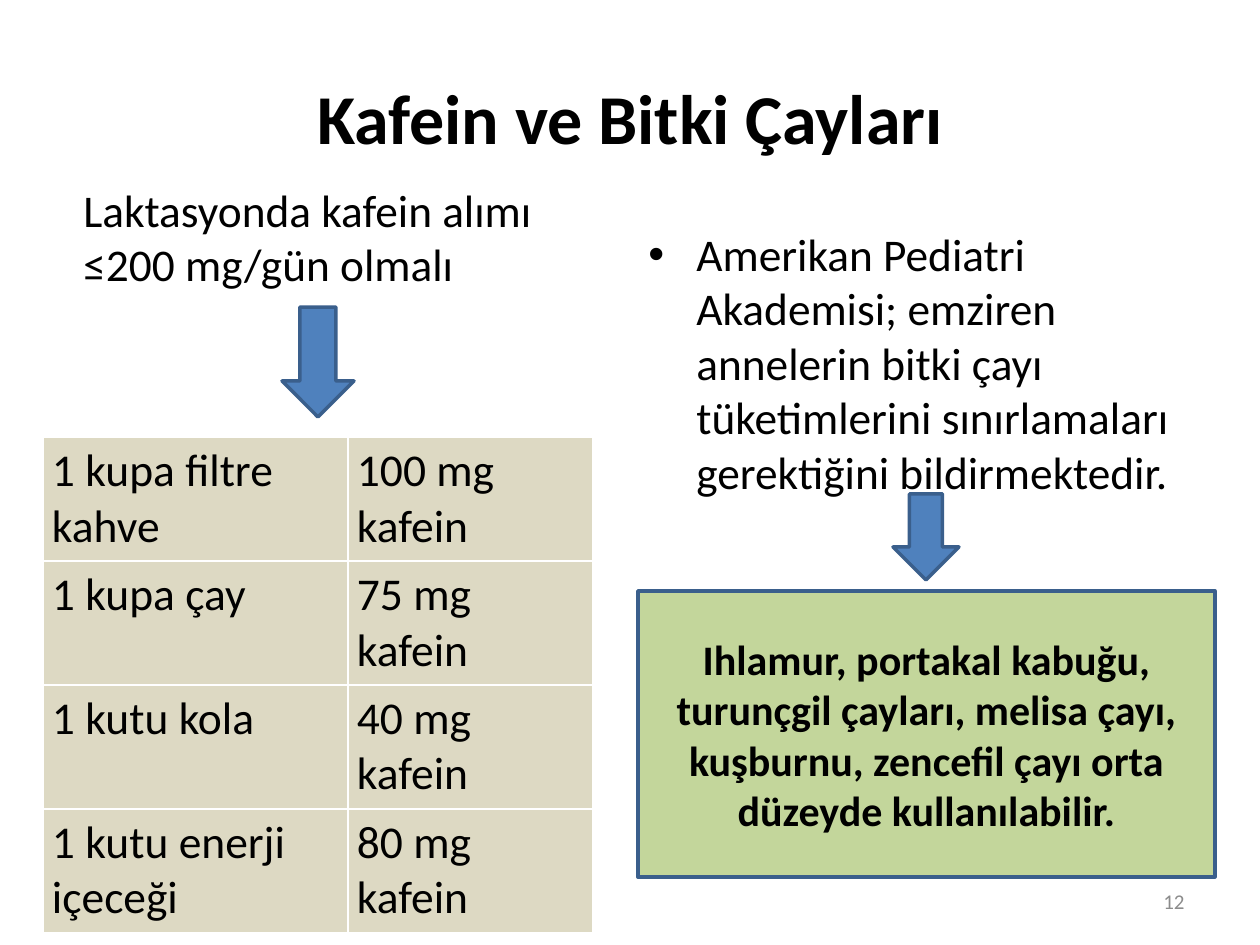
import pptx
import pptx.util
import pptx.dml.color
import pptx.enum.shapes
import pptx.enum.text
import pptx.oxml
import pptx.oxml.ns

RGBColor = pptx.dml.color.RGBColor
SHAPES = pptx.enum.shapes.MSO_SHAPE
ALIGN = pptx.enum.text.PP_ALIGN
ANCHOR = pptx.enum.text.MSO_ANCHOR

BLACK = RGBColor(0x00, 0x00, 0x00)
WHITE = RGBColor(0xFF, 0xFF, 0xFF)
GRAY = RGBColor(0x8C, 0x8C, 0x8C)
BLUE = RGBColor(0x4F, 0x81, 0xBD)
DARK_BLUE = RGBColor(0x3A, 0x5F, 0x8C)
GREEN = RGBColor(0xC3, 0xD6, 0x9B)
BEIGE = RGBColor(0xDD, 0xD9, 0xC3)

FONT = "Calibri"
BODY_SIZE = 25.9
CAFFEINE_ROWS = [
    ("1 kupa filtre kahve", "100 mg kafein"),
    ("1 kupa çay", "75 mg kafein"),
    ("1 kutu kola", "40 mg kafein"),
    ("1 kutu enerji içeceği", "80 mg kafein"),
]


def px(length):
    return pptx.util.Emu(round(length * 914400 / 126))


def write(frame, text, size, color=BLACK, bold=False, align=ALIGN.LEFT, anchor=ANCHOR.TOP):
    frame.word_wrap = True
    frame.vertical_anchor = anchor
    para = frame.paragraphs[0]
    para.alignment = align
    span = para.add_run()
    span.text = text
    span.font.name = FONT
    span.font.size = pptx.util.Pt(size)
    span.font.bold = bold
    span.font.color.rgb = color
    return para


def add_text(page, place, text, size, **style):
    box = page.shapes.add_textbox(*map(px, place))
    return write(box.text_frame, text, size, **style)


def add_bullet(para, indent):
    properties = para._p.get_or_add_pPr()
    properties.set("marL", str(px(indent)))
    properties.set("indent", str(-px(indent)))
    namespace = pptx.oxml.ns.nsdecls("a")
    properties.append(pptx.oxml.parse_xml(f'<a:buFont {namespace} typeface="Arial"/>'))
    properties.append(pptx.oxml.parse_xml(f'<a:buChar {namespace} char="•"/>'))


def add_outlined(page, kind, place, fill):
    shape = page.shapes.add_shape(kind, *map(px, place))
    shape.shadow.inherit = False
    shape.fill.solid()
    shape.fill.fore_color.rgb = fill
    shape.line.color.rgb = DARK_BLUE
    shape.line.width = pptx.util.Pt(2)
    return shape


def add_borders(cell):
    properties = cell._tc.get_or_add_tcPr()
    for position, side in enumerate(("lnL", "lnR", "lnT", "lnB")):
        border = pptx.oxml.parse_xml(
            f'<a:{side} {pptx.oxml.ns.nsdecls("a")} w="{pptx.util.Pt(1)}">'
            f'<a:solidFill><a:srgbClr val="{WHITE}"/></a:solidFill></a:{side}>'
        )
        properties.insert(position, border)


def add_caffeine_table(page, left, top, widths, row_height):
    height = row_height * len(CAFFEINE_ROWS)
    place = (left, top, sum(widths), height)
    table = page.shapes.add_table(len(CAFFEINE_ROWS), len(widths), *map(px, place)).table
    for column, width in zip(table.columns, widths):
        column.width = px(width)
    for row, texts in zip(table.rows, CAFFEINE_ROWS):
        row.height = px(row_height)
        for cell, text in zip(row.cells, texts):
            cell.margin_left = cell.margin_right = px(9)
            cell.margin_top = cell.margin_bottom = px(6)
            cell.fill.solid()
            cell.fill.fore_color.rgb = BEIGE
            add_borders(cell)
            write(cell.text_frame, text, 26)


def main():
    deck = pptx.Presentation()
    deck.slide_width, deck.slide_height = px(1260), px(945)
    page = deck.slides.add_slide(deck.slide_layouts[6])

    tea_box = add_outlined(page, SHAPES.RECTANGLE, (638, 591, 577, 286), GREEN)
    write(
        tea_box.text_frame,
        "Ihlamur, portakal kabuğu, turunçgil çayları, melisa çayı, "
        "kuşburnu, zencefil çayı orta düzeyde kullanılabilir.",
        24, bold=True, align=ALIGN.CENTER, anchor=ANCHOR.MIDDLE,
    )
    add_text(page, (63, 38, 1134, 157), "Kafein ve Bitki Çayları", 40,
             bold=True, align=ALIGN.CENTER, anchor=ANCHOR.MIDDLE)
    add_text(page, (71, 176, 495, 141), "Laktasyonda kafein alımı ≤200 mg/gün olmalı", BODY_SIZE)
    advice = add_text(
        page, (636, 220, 572, 284),
        "Amerikan Pediatri Akademisi; emziren annelerin bitki çayı "
        "tüketimlerini sınırlamaları gerektiğini bildirmektedir.",
        BODY_SIZE,
    )
    add_bullet(advice, 48)
    add_text(page, (903, 876, 294, 50), "12", 12, color=GRAY,
             align=ALIGN.RIGHT, anchor=ANCHOR.MIDDLE)
    add_caffeine_table(page, 43, 437, (305, 245), 124)
    for place in ((282, 307, 72, 110), (893, 494, 66, 86)):
        add_outlined(page, SHAPES.DOWN_ARROW, place, BLUE)

    deck.save("out.pptx")


if __name__ == "__main__":
    main()
